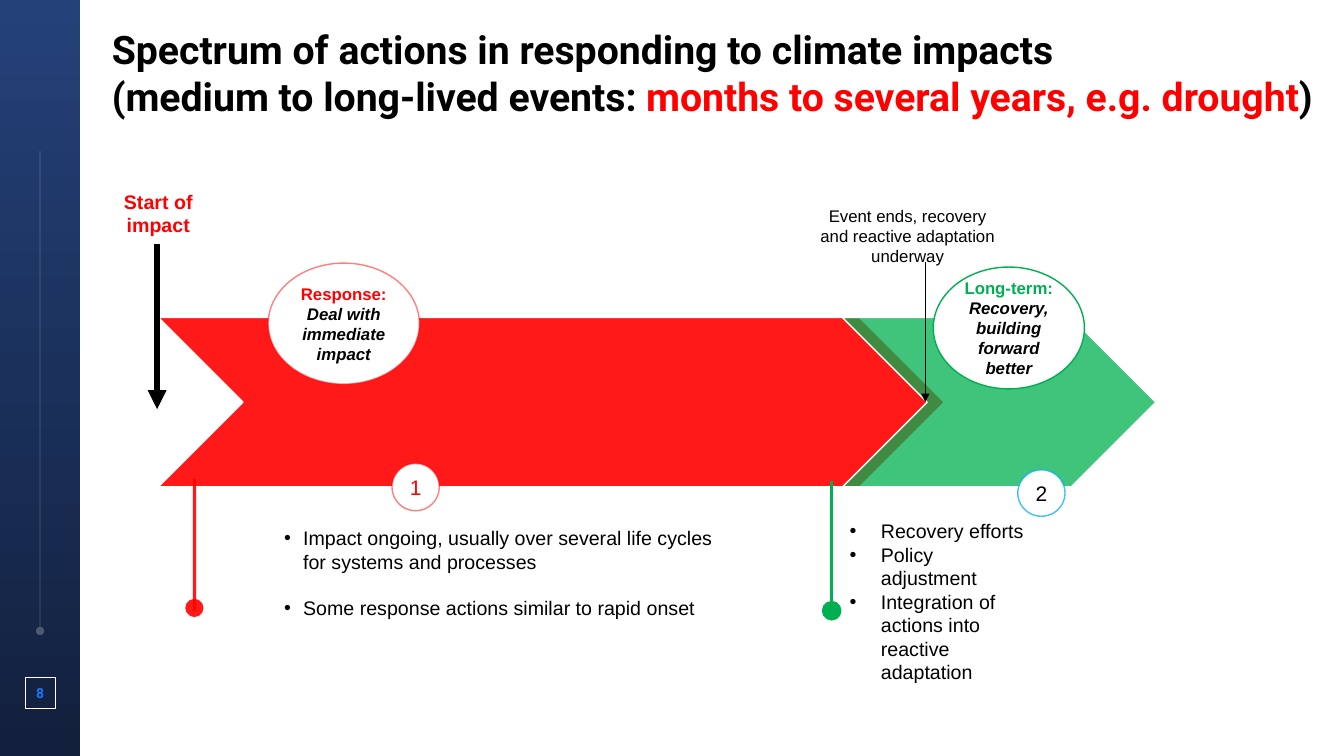
"""Build the slide on the spectrum of actions in responding to climate impacts."""
import lxml.etree
import pptx
import pptx.dml.color
import pptx.enum.shapes
import pptx.enum.text
import pptx.oxml.ns
import pptx.util

Cm = pptx.util.Cm
Pt = pptx.util.Pt
SHAPE = pptx.enum.shapes.MSO_SHAPE
ALIGN = pptx.enum.text.PP_ALIGN
ANCHOR = pptx.enum.text.MSO_ANCHOR
RED, GREEN, BLUE, BLACK, WHITE = "FF0000", "00B050", "00B0F0", "000000", "FFFFFF"


def color(value):
    return pptx.dml.color.RGBColor.from_string(value)


def add_element(parent, tag, **attributes):
    return lxml.etree.SubElement(parent, pptx.oxml.ns.qn(tag), attributes)


def set_opacity(shape, route, percent):
    if percent < 100:
        for node in shape.element.xpath(f"./p:spPr/{route}a:solidFill/a:srgbClr"):
            add_element(node, "a:alpha", val=str(percent * 1000))


def write(para, text, size=14, font="Arial", ink=BLACK, bold=False, italic=False):
    for index, part in enumerate(text.split("\n")):
        if index:
            para.add_line_break()
        if part:
            span = para.add_run()
            span.text = part
            span.font.size = Pt(size)
            span.font.name = font
            span.font.bold = bold
            span.font.italic = italic
            span.font.color.rgb = color(ink)


class Page:
    def __init__(self, deck):
        self.shapes = deck.slides.add_slide(deck.slide_layouts[6]).shapes

    def frame(self, shape, margins=(0, 0), anchor=ANCHOR.MIDDLE):
        frame = shape.text_frame
        frame.word_wrap = True
        frame.margin_left = frame.margin_right = Cm(margins[0])
        frame.margin_top = frame.margin_bottom = Cm(margins[1])
        frame.vertical_anchor = anchor
        return frame

    def text(self, place, *spans, align=ALIGN.CENTER, margins=(0.25, 0.13), anchor=ANCHOR.TOP):
        box = self.shapes.add_textbox(*map(Cm, place))
        para = self.frame(box, margins, anchor).paragraphs[0]
        para.alignment = align
        for text, style in spans:
            write(para, text, **style)

    def bullets(self, place, items, indent, gap=0):
        frame = self.frame(self.shapes.add_textbox(*map(Cm, place)), (0.25, 0.13), ANCHOR.TOP)
        for index, item in enumerate(items):
            para = frame.add_paragraph() if index else frame.paragraphs[0]
            properties = para._p.get_or_add_pPr()
            properties.set("marL", str(Cm(indent)))
            properties.set("indent", str(-Cm(indent)))
            add_element(properties, "a:buFont", typeface="Arial")
            add_element(properties, "a:buChar", char="•")
            if index:
                para.space_before = Pt(gap)
            write(para, item)

    def shape(self, kind, place, fill=None, opacity=100, line=None, width=1, line_opacity=100):
        shape = self.shapes.add_shape(kind, *map(Cm, place))
        shape.shadow.inherit = False
        if fill:
            shape.fill.solid()
            shape.fill.fore_color.rgb = color(fill)
            set_opacity(shape, "", opacity)
        else:
            shape.fill.background()
        if line:
            shape.line.color.rgb = color(line)
            shape.line.width = Pt(width)
            set_opacity(shape, "a:ln/", line_opacity)
        else:
            shape.line.fill.background()
        return shape

    def sidebar(self, place, *stops):
        bar = self.shape(SHAPE.RECTANGLE, place)
        bar.fill.gradient()
        bar.fill.gradient_angle = 270
        for stop, value in zip(bar.fill.gradient_stops, stops):
            stop.color.rgb = color(value)

    def drop(self, x, top, bottom, ink, width, opacity=100, end=None):
        line = self.shapes.add_connector(
            pptx.enum.shapes.MSO_CONNECTOR.STRAIGHT, Cm(x), Cm(top), Cm(x), Cm(bottom))
        line.line.color.rgb = color(ink)
        line.line.width = Pt(width)
        set_opacity(line, "a:ln/", opacity)
        if end:
            add_element(line.element.xpath("./p:spPr/a:ln")[0], "a:tailEnd", type=end)
        add_element(line.element.spPr, "a:effectLst")

    def bubble(self, place, line, line_opacity, *spans):
        oval = self.shape(SHAPE.OVAL, place, WHITE, line=line, line_opacity=line_opacity)
        para = self.frame(oval).paragraphs[0]
        para.alignment = ALIGN.CENTER
        for text, style in spans:
            write(para, text, **style)


def main():
    deck = pptx.Presentation()
    deck.slide_width, deck.slide_height = Cm(33.87), Cm(19.05)
    page = Page(deck)

    page.sidebar((0, 0, 2.02, 19.05), "244179", "12203D")
    page.drop(1.01, 3.81, 15.9, WHITE, 0.5, opacity=24, end="oval")
    page.shape(SHAPE.RECTANGLE, (0.63, 17.07, 0.77, 0.77), line=WHITE, width=0.5)

    title = dict(size=28, font="Roboto", bold=True)
    page.text(
        (2.82, 0.64, 30.66, 2.39),
        ("Spectrum of actions in responding to climate impacts\n"
         "(medium to long-lived events: ", title),
        ("months to several years, e.g. drought", dict(title, ink=RED)),
        (")", title),
        align=ALIGN.LEFT, margins=(0, 0), anchor=ANCHOR.MIDDLE)
    page.text((0.63, 17.25, 0.77, 0.43),
              ("8", dict(size=10, font="Roboto", ink="1775F9", bold=True)), margins=(0, 0))
    page.text((2.82, 4.65, 2.34, 1.45), ("Start of impact", dict(ink=RED, bold=True)))
    page.text((20.4, 5.05, 4.95, 1.8),
              ("Event ends, recovery and reactive adaptation underway", dict(size=12)))

    for left, width, fill, opacity in ((3.99, 19.81, RED, 90), (21.23, 7.9, GREEN, 75)):
        page.shape(SHAPE.CHEVRON, (left, 8, width, 4.27), fill, opacity, line=WHITE)

    dot = 0.46
    for x, top, bottom, center, ink, opacity, edge in (
            (4.9, 12.07, 15.39, 15.32, RED, 90, None),
            (20.96, 12.12, 15.47, 15.39, GREEN, 100, GREEN)):
        page.drop(x, top, bottom, ink, 2.25, opacity)
        page.shape(SHAPE.OVAL, (x - dot / 2, center - dot / 2, dot, dot), ink, opacity, line=edge)

    page.drop(3.96, 6.15, 10.31, BLACK, 4.5, end="triangle")
    page.drop(23.32, 6.6, 10.13, BLACK, 1, end="triangle")

    head = dict(size=12, bold=True)
    body = dict(head, italic=True)
    page.bubble((6.76, 6.63, 3.81, 3.05), RED, 50,
                ("Response: ", dict(head, ink=RED)), ("Deal with immediate impact", body))
    page.bubble((23.52, 6.73, 3.81, 3.07), GREEN, 100,
                ("Long-term:\n", dict(head, ink=GREEN)),
                ("Recovery, building forward better", body))
    page.bubble((9.88, 11.68, 1.19, 1.19), RED, 50, ("1", dict(size=15, ink=RED)))
    page.bubble((25.65, 11.84, 1.19, 1.17), BLUE, 75, ("2", dict(size=15)))

    page.bullets((6.91, 13.13, 11.58, 3.25), (
        "Impact ongoing, usually over several life cycles for systems and processes",
        "Some response actions similar to rapid onset"), 0.48, gap=16)
    page.bullets((21.16, 12.95, 4.98, 4.45), (
        "Recovery efforts",
        "Policy adjustment",
        "Integration of actions into reactive adaptation"), 0.79)

    deck.save("out.pptx")


if __name__ == "__main__":
    main()
